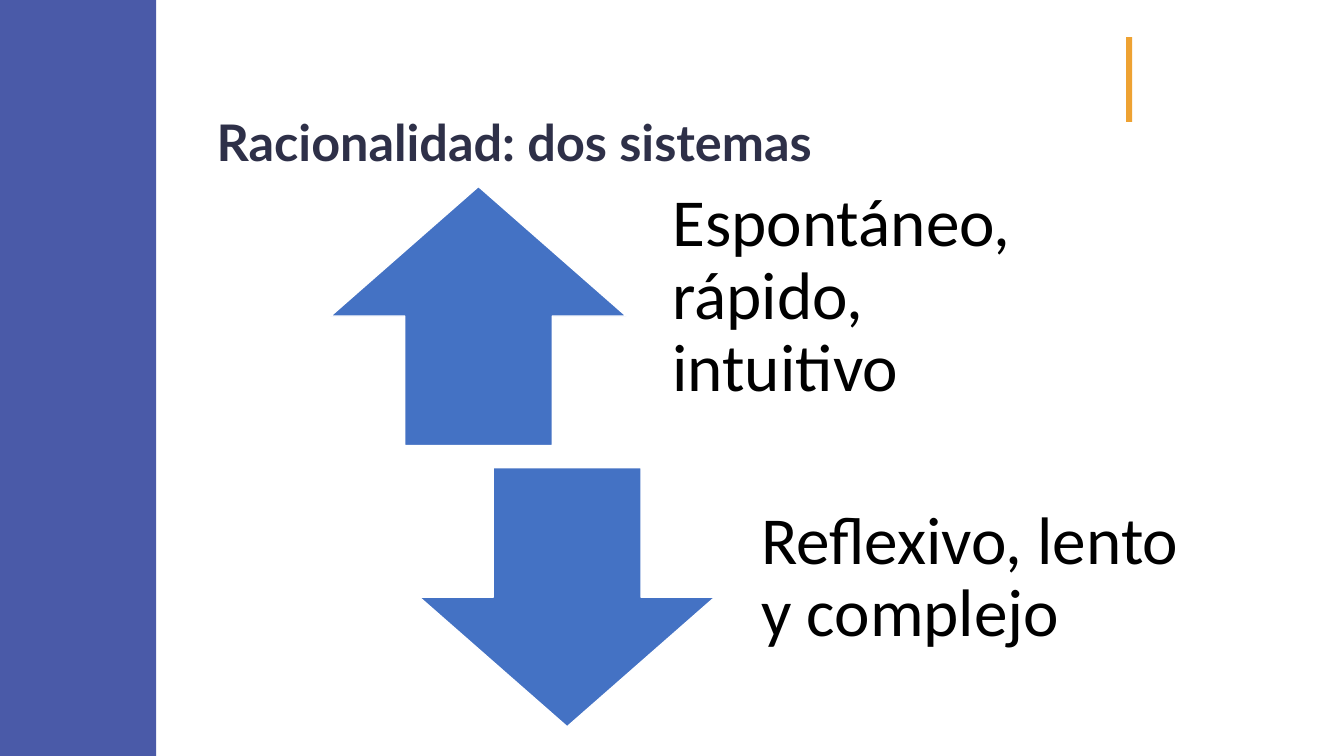
from dataclasses import dataclass

from pptx import Presentation
from pptx.dml.color import RGBColor
from pptx.enum.shapes import MSO_SHAPE as Shp
from pptx.enum.text import MSO_ANCHOR as Anchor
from pptx.slide import Slide
from pptx.util import Inches, Pt

WIDTH, HEIGHT = 13.33, 7.5
COLORS = {
    "sidebar": "4A5AA8",
    "accent": "EEA232",
    "title": "2E3048",
    "arrow": "4472C4",
    "outline": "FFFFFF",
    "text": "000000",
}


@dataclass(frozen=True)
class Box:
    """Position and size in percent of the slide's width and height."""
    x: float
    y: float
    w: float
    h: float

    def emu(self) -> tuple[int, int, int, int]:
        return (Inches(WIDTH * self.x / 100), Inches(HEIGHT * self.y / 100),
                Inches(WIDTH * self.w / 100), Inches(HEIGHT * self.h / 100))


@dataclass(frozen=True)
class System:
    arrow: Shp
    x: float
    y: float
    text: str


@dataclass(frozen=True)
class Style:
    font: str
    size: int
    color: str
    bold: bool = False


TITLE = Style("Lato", 36, "title", True)
BODY = Style("Calibri", 48, "text")
SYSTEMS = [
    System(Shp.UP_ARROW, 24.61, 24.67, "Espontáneo, rápido, intuitivo"),
    System(Shp.DOWN_ARROW, 31.21, 61.87, "Reflexivo, lento y complejo"),
]
ARROW_W, TEXT_W, ROW_H, TEXT_SHIFT = 21.98, 37.36, 34.27, 22.65


def add_block(s: Slide, kind: Shp, box: Box, fill: str, line: str = "") -> None:
    sp = s.shapes.add_shape(kind, *box.emu())
    sp.shadow.inherit = False
    sp.fill.solid()
    sp.fill.fore_color.rgb = RGBColor.from_string(COLORS[fill])
    if line:
        sp.line.color.rgb = RGBColor.from_string(COLORS[line])
        sp.line.width = Pt(1)
    else:
        sp.line.fill.background()


def add_text(s: Slide, box: Box, text: str, style: Style,
             insets: tuple[float, float, float, float]) -> None:
    tf = s.shapes.add_textbox(*box.emu()).text_frame
    tf.word_wrap = True
    tf.vertical_anchor = Anchor.MIDDLE
    tf.margin_left, tf.margin_top, tf.margin_right, tf.margin_bottom = map(Inches, insets)
    tf.text = text
    p = tf.paragraphs[0]
    p.line_spacing = 0.9
    r = p.runs[0]
    r.font.name = style.font
    r.font.size = Pt(style.size)
    r.font.bold = style.bold
    r.font.color.rgb = RGBColor.from_string(COLORS[style.color])


def add_system(s: Slide, system: System) -> None:
    add_block(s, system.arrow, Box(system.x, system.y, ARROW_W, ROW_H), "arrow", "outline")
    add_text(s, Box(system.x + TEXT_SHIFT, system.y, TEXT_W, ROW_H), system.text,
             BODY, (0.37, 0, 0.37, 0.37))


def main() -> None:
    prs = Presentation()
    prs.slide_width, prs.slide_height = Inches(WIDTH), Inches(HEIGHT)
    s = prs.slides.add_slide(prs.slide_layouts[6])
    add_block(s, Shp.RECTANGLE, Box(0, 0, 11.63, 100), "sidebar")
    add_block(s, Shp.RECTANGLE, Box(83.8, 4.93, 0.45, 11.2), "accent")
    add_text(s, Box(15.38, 11.6, 67.14, 15.07), "Racionalidad: dos sistemas",
             TITLE, (0.1, 0.05, 0.1, 0.05))
    for system in SYSTEMS:
        add_system(s, system)
    prs.save("out.pptx")


if __name__ == "__main__":
    main()
